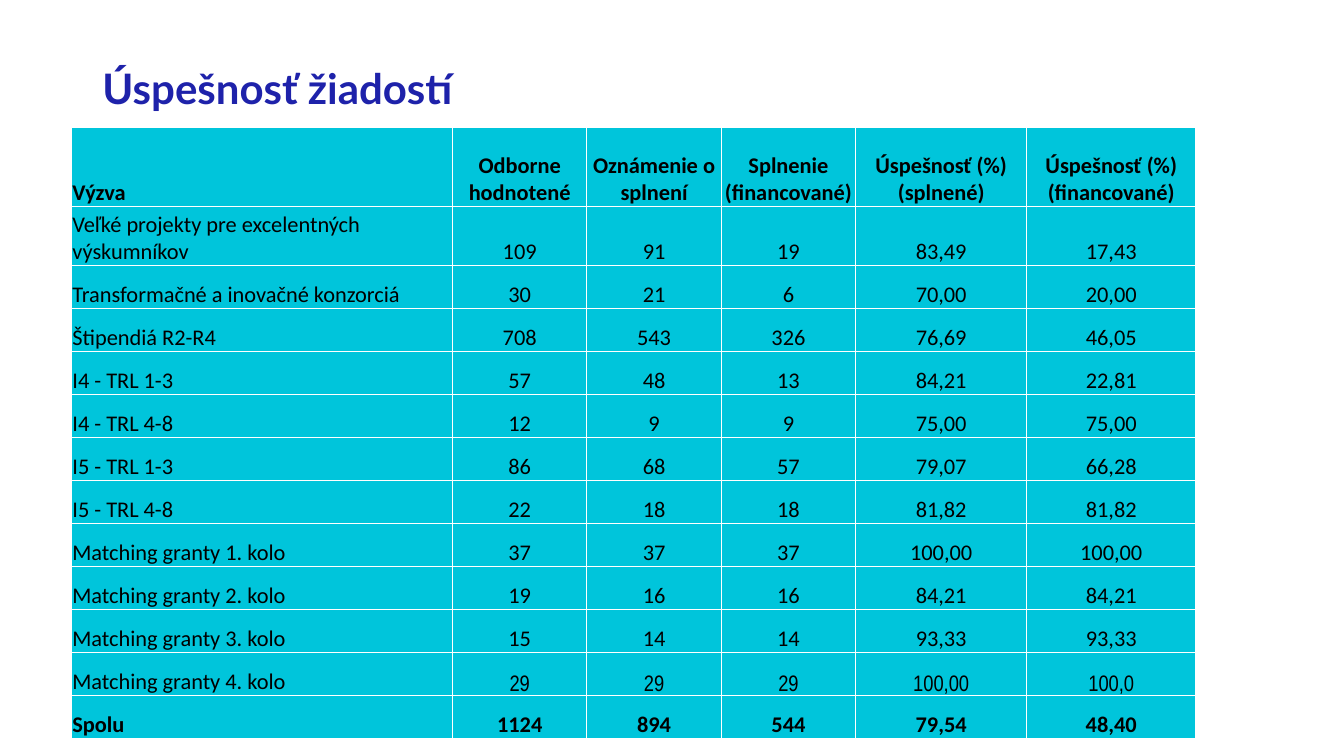
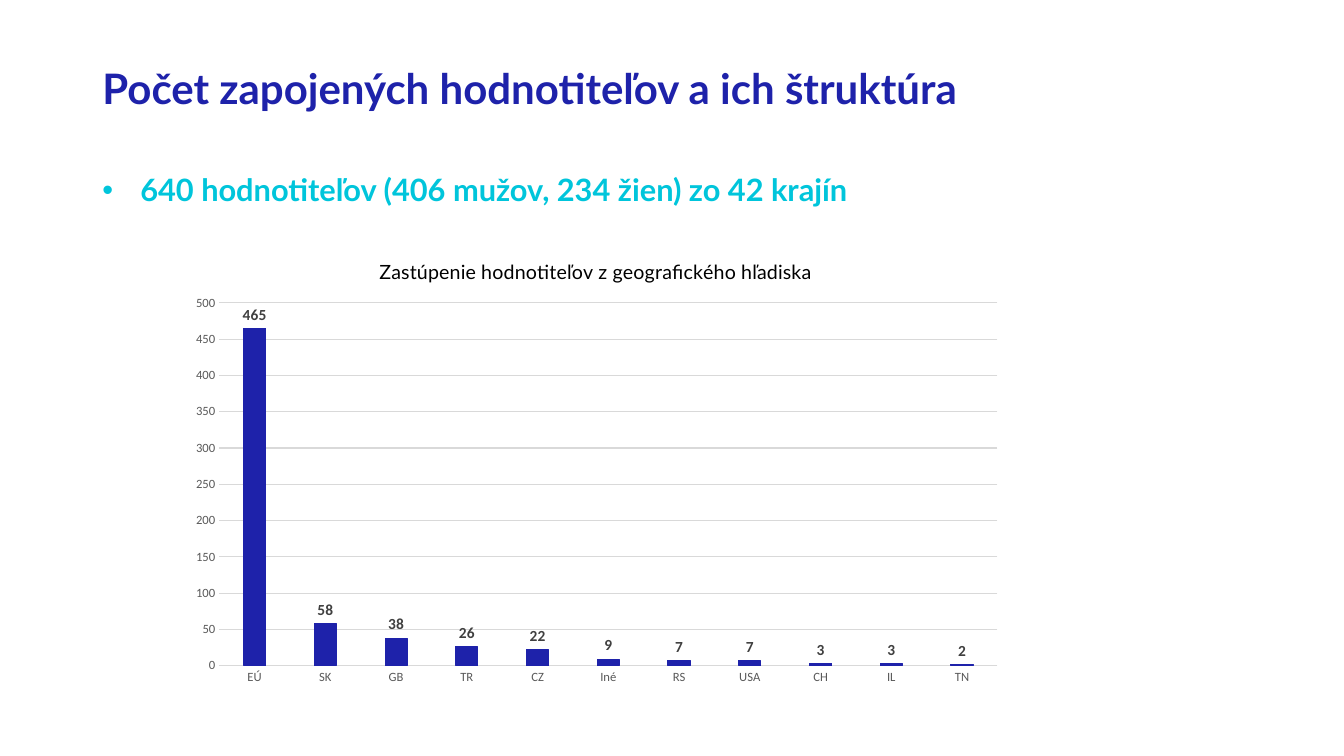
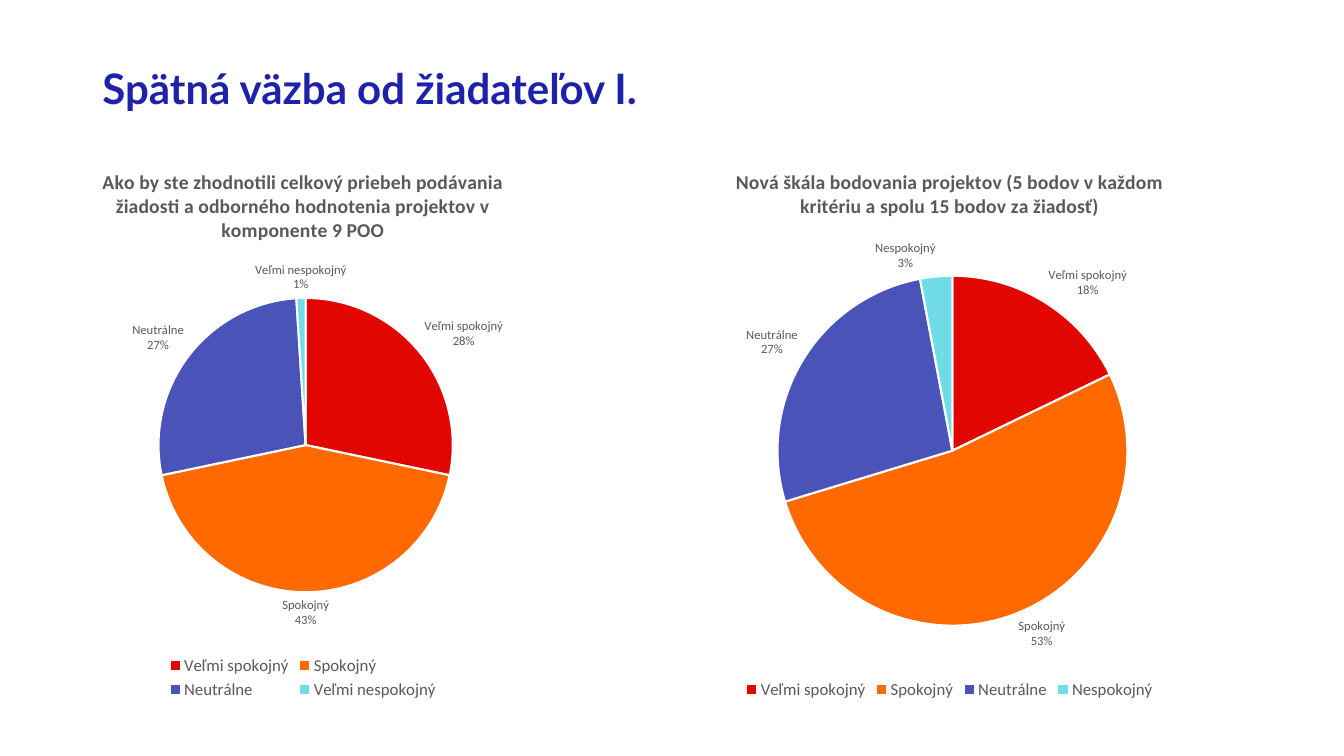
import pptx
import pptx.chart.data
import pptx.dml.color
import pptx.enum.chart
import pptx.enum.text
import pptx.oxml
import pptx.oxml.ns
import pptx.util

PX = 9525
NAVY, CYAN, BLACK, WHITE = "1E22AA", "00C5DB", "000000", "FFFFFF"
GREY, DARK, PALE = "595959", "404040", "D9D9D9"
PIE_COLORS = ["E10600", "FF6900", "4A53B8", "6FDCE8"]
XL = pptx.enum.chart
NS = pptx.oxml.ns.nsdecls


def style(font, size, color, name="Calibri", bold=False):
    font.size = pptx.util.Pt(size)
    font.name = name
    font.bold = bold
    font.color.rgb = pptx.dml.color.RGBColor.from_string(color)


def add_chart(s, kind, box, cats, title, name, vals, title_font, plot_box):
    data = pptx.chart.data.CategoryChartData()
    data.categories = cats
    data.add_series(name, vals)
    chart = s.shapes.add_chart(kind, *[v * PX for v in box], data).chart
    style(chart.font, 10, BLACK)
    chart.has_title = True
    r = chart.chart_title.text_frame.paragraphs[0].add_run()
    r.text = title
    style(r.font, *title_font)
    chart.chart_title.include_in_layout = False
    area = chart._chartSpace.chart.plotArea
    for old in area.findall(pptx.oxml.ns.qn("c:layout")):
        area.remove(old)
    x, y, w, h = plot_box
    area.insert(0, pptx.oxml.parse_xml(
        f'<c:layout {NS("c")}><c:manualLayout><c:layoutTarget val="inner"/>'
        '<c:xMode val="edge"/><c:yMode val="edge"/>'
        f'<c:x val="{x}"/><c:y val="{y}"/><c:w val="{w}"/><c:h val="{h}"/>'
        '</c:manualLayout></c:layout>'))
    return chart


rgb = pptx.dml.color.RGBColor.from_string
prs = pptx.Presentation()
prs.slide_width, prs.slide_height = 1280 * PX, 720 * PX

slides = []
for layout, title in [(5, "Úspešnosť žiadostí"),
                      (1, "Počet zapojených hodnotiteľov a ich štruktúra"),
                      (5, "Spätná väzba od žiadateľov I.")]:
    s = prs.slides.add_slide(prs.slide_layouts[layout])
    sp = s.shapes.title
    sp.left, sp.top, sp.width, sp.height = [v * PX for v in (88, 60, 878, 82)]
    tf = sp.text_frame
    tf.word_wrap = True
    tf.auto_size = pptx.enum.text.MSO_AUTO_SIZE.NONE
    tf.vertical_anchor = pptx.enum.text.MSO_ANCHOR.TOP
    p = tf.paragraphs[0]
    p.alignment = pptx.enum.text.PP_ALIGN.LEFT
    p.line_spacing = 0.9
    r = p.add_run()
    r.text = title
    style(r.font, 30, NAVY, "Lato", True)
    slides.append(s)

rows = [
    ["Výzva", "Odborne hodnotené", "Oznámenie o splnení", "Splnenie (financované)",
     "Úspešnosť (%) (splnené)", "Úspešnosť (%) (financované)"],
    ["Veľké projekty pre excelentných výskumníkov", "109", "91", "19", "83,49", "17,43"],
    ["Transformačné a inovačné konzorciá", "30", "21", "6", "70,00", "20,00"],
    ["Štipendiá R2-R4", "708", "543", "326", "76,69", "46,05"],
    ["I4 - TRL 1-3", "57", "48", "13", "84,21", "22,81"],
    ["I4 - TRL 4-8", "12", "9", "9", "75,00", "75,00"],
    ["I5 - TRL 1-3", "86", "68", "57", "79,07", "66,28"],
    ["I5 - TRL 4-8", "22", "18", "18", "81,82", "81,82"],
    ["Matching granty 1. kolo", "37", "37", "37", "100,00", "100,00"],
    ["Matching granty 2. kolo", "19", "16", "16", "84,21", "84,21"],
    ["Matching granty 3. kolo", "15", "14", "14", "93,33", "93,33"],
    ["Matching granty 4. kolo", "29", "29", "29", "100,00", "100,0"],
    ["Spolu", "1124", "894", "544", "79,54", "48,40"],
]
widths = [363, 128, 128, 128, 163, 161]
heights = [76, 56] + [41] * 11
table = slides[0].shapes.add_table(
    len(rows), len(widths), 68 * PX, 121 * PX, sum(widths) * PX, sum(heights) * PX).table
table.first_row = table.horz_banding = False
for col, w in zip(table.columns, widths):
    col.width = w * PX
for i, row in enumerate(rows):
    table.rows[i].height = heights[i] * PX
    for j, text in enumerate(row):
        cell = table.cell(i, j)
        cell.fill.solid()
        cell.fill.fore_color.rgb = rgb(CYAN)
        cell.vertical_anchor = pptx.enum.text.MSO_ANCHOR.BOTTOM
        cell.margin_left = cell.margin_right = cell.margin_top = PX
        cell.margin_bottom = 0
        p = cell.text_frame.paragraphs[0]
        if j:
            p.alignment = pptx.enum.text.PP_ALIGN.CENTER
        r = p.add_run()
        r.text = text
        narrow = j > 0 and row[0] == "Matching granty 4. kolo"
        style(r.font, 16, BLACK, "Arial Narrow" if narrow else "Calibri",
              i in (0, len(rows) - 1))
        tcPr = cell._tc.get_or_add_tcPr()
        for k, side in enumerate("LRTB"):
            tcPr.insert(k, pptx.oxml.parse_xml(
                f'<a:ln{side} {NS("a")} w="12700"><a:solidFill>'
                f'<a:srgbClr val="{WHITE}"/></a:solidFill></a:ln{side}>'))

s = slides[1]
sp = s.placeholders[1]
sp.left, sp.top, sp.width, sp.height = [v * PX for v in (88, 162, 878, 498)]
tf = sp.text_frame
tf.auto_size = pptx.enum.text.MSO_AUTO_SIZE.NONE
p = tf.paragraphs[0]
p.line_spacing = 0.9
p.space_before = pptx.util.Pt(0)
pPr = p._p.get_or_add_pPr()
pPr.set("marL", str(36 * PX))
pPr.set("indent", str(-36 * PX))
pPr.append(pptx.oxml.parse_xml(f'<a:buChar {NS("a")} char="•"/>'))
r = p.add_run()
r.text = "640 hodnotiteľov (406 mužov, 234 žien) zo 42 krajín"
style(r.font, 22, CYAN, "Lato", True)

chart = add_chart(
    s, XL.XL_CHART_TYPE.COLUMN_CLUSTERED, (169, 228, 797, 432),
    ["EÚ", "SK", "GB", "TR", "CZ", "Iné", "RS", "USA", "CH", "IL", "TN"],
    "Zastúpenie hodnotiteľov z geografického hľadiska", "Series 1",
    [465, 58, 38, 26, 22, 9, 7, 7, 3, 3, 2],
    (14, BLACK, "Lato"), (0.05, 0.14, 0.93, 0.8))
chart.has_legend = False
plot = chart.plots[0]
plot.gap_width = 219
plot.vary_by_categories = False
series = plot.series[0]
series.format.fill.solid()
series.format.fill.fore_color.rgb = rgb(NAVY)
series.format.line.color.rgb = rgb(NAVY)
series.format.line.width = pptx.util.Pt(0.75)
labels = series.data_labels
labels.show_value = True
labels.position = XL.XL_LABEL_POSITION.OUTSIDE_END
style(labels.font, 11, DARK, bold=True)
for axis in (chart.category_axis, chart.value_axis):
    axis.major_tick_mark = axis.minor_tick_mark = XL.XL_TICK_MARK.NONE
    style(axis.tick_labels.font, 9, GREY)
axis = chart.value_axis
axis.minimum_scale, axis.maximum_scale, axis.major_unit = 0, 500, 50
axis.format.line.fill.background()
for line in (chart.category_axis.format.line, axis.major_gridlines.format.line):
    line.color.rgb = rgb(PALE)
    line.width = pptx.util.Pt(0.75)

pies = [
    (24, "Ako by ste zhodnotili celkový priebeh podávania žiadosti a odborného hodnotenia "
     "projektov v komponente 9 POO", "Veľmi nespokojný", [28, 43, 27, 1],
     (0.24, 0.27, 0.53, 0.53)),
    (640, "Nová škála bodovania projektov (5 bodov v každom kritériu a spolu 15 bodov "
     "za žiadosť)", "Nespokojný", [18, 53, 27, 3], (0.19, 0.23, 0.63, 0.63)),
]
for left, title, last, vals, plot_box in pies:
    chart = add_chart(
        slides[2], XL.XL_CHART_TYPE.PIE, (left, 141, 529, 529),
        ["Veľmi spokojný", "Spokojný", "Neutrálne", last], title, title, vals,
        (14, GREY, "Calibri", True), plot_box)
    chart.has_legend = True
    chart.legend.position = XL.XL_LEGEND_POSITION.BOTTOM
    chart.legend.include_in_layout = False
    style(chart.legend.font, 12, GREY)
    chart.plots[0].vary_by_categories = True
    series = chart.plots[0].series[0]
    for i, color in enumerate(PIE_COLORS):
        fmt = series.points[i].format
        fmt.fill.solid()
        fmt.fill.fore_color.rgb = rgb(color)
        fmt.line.color.rgb = rgb(WHITE)
        fmt.line.width = pptx.util.Pt(1.5)
    labels = series.data_labels
    labels.show_value = labels.show_category_name = True
    labels.number_format = '0"%"'
    labels.number_format_is_linked = False
    labels.position = XL.XL_LABEL_POSITION.OUTSIDE_END
    style(labels.font, 9, GREY)
    labels._element.find(pptx.oxml.ns.qn("c:showBubbleSize")).addnext(
        pptx.oxml.parse_xml(f'<c:separator {NS("c")}>\n</c:separator>'))

prs.save("out.pptx")
